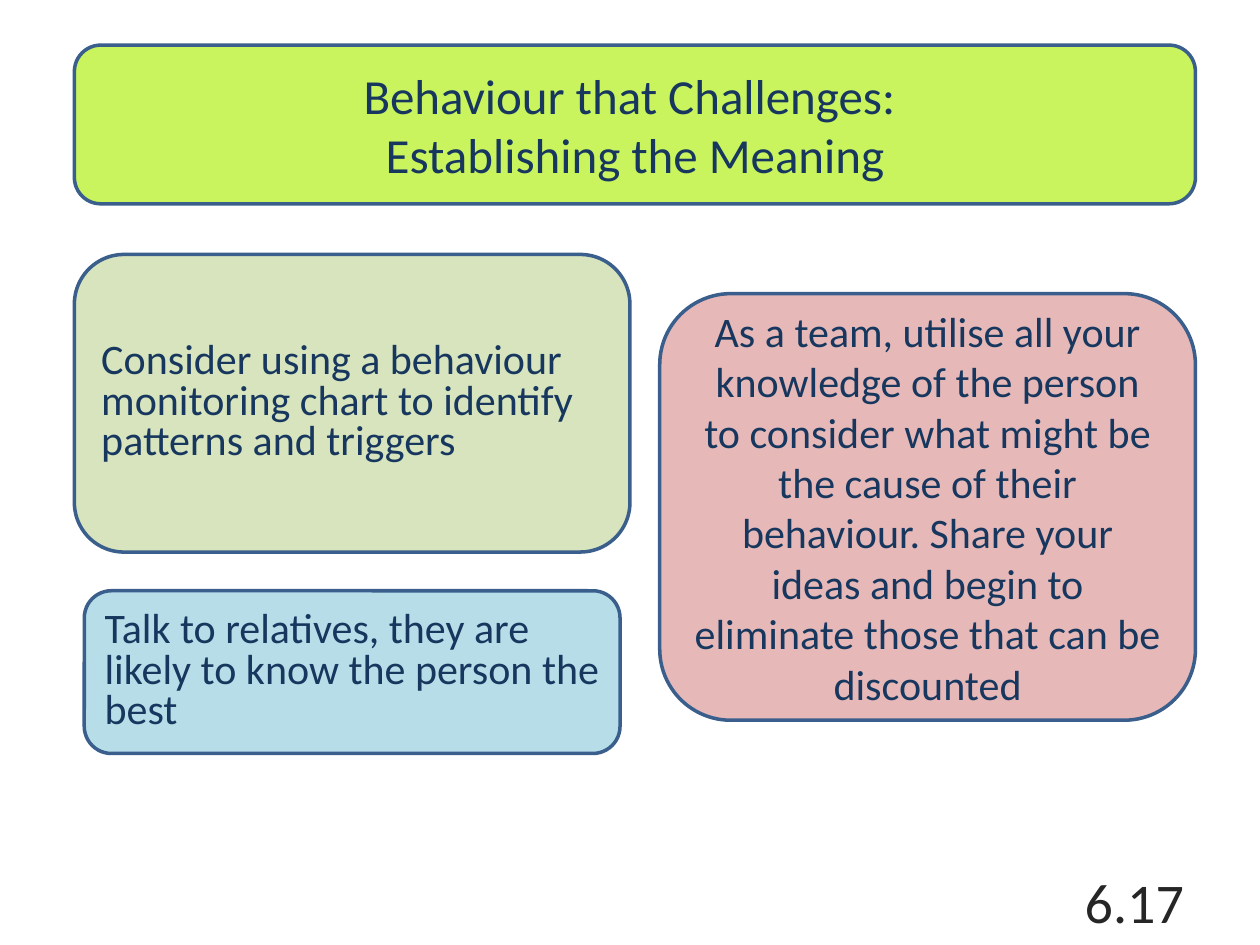
from pptx import Presentation
from pptx.dml.color import RGBColor
from pptx.enum.shapes import MSO_SHAPE as Shape
from pptx.enum.text import MSO_ANCHOR as Anchor, PP_ALIGN as Align
from pptx.util import Cm, Pt

NAVY = "17375E"
OUTLINE = "3A5F8C"


def color(value):
    return RGBColor.from_string(value)


def write_text(shape, lines, size, font_color, alignment, spacing=None):
    """Fill the shape with one paragraph per line, centred vertically."""
    text_frame = shape.text_frame
    text_frame.word_wrap = True
    text_frame.vertical_anchor = Anchor.MIDDLE
    text_frame.text = "\n".join(lines)
    for paragraph in text_frame.paragraphs:
        paragraph.alignment = alignment
        paragraph.line_spacing = spacing
        for run in paragraph.runs:
            run.font.name = "Calibri"
            run.font.size = Pt(size)
            run.font.color.rgb = color(font_color)


presentation = Presentation()
presentation.slide_width = Cm(25.4)
presentation.slide_height = Cm(19.05)
slide = presentation.slides.add_slide(presentation.slide_layouts[6])

# left, top, width, height in cm, fill, lines, size, alignment, line spacing
panels = [
    (1.5, 0.91, 22.6, 3.2, "C9F45E",
     ["Behaviour that Challenges: ", "Establishing the Meaning"],
     28, Align.CENTER, None),
    (1.5, 5.13, 11.2, 6, "D7E4BD",
     ["Consider using a behaviour monitoring chart to identify "
      "patterns and triggers"],
     24, Align.LEFT, 0.8),
    (1.7, 11.91, 10.8, 3.28, "B7DEE8",
     ["Talk to relatives, they are likely to know the person the best"],
     24, Align.LEFT, 0.8),
    (13.3, 5.92, 10.8, 8.6, "E6B9B8",
     ["As a team, utilise all your knowledge of the person to consider what "
      "might be the cause of their behaviour. Share your ideas and begin to "
      "eliminate those that can be discounted"],
     24, Align.CENTER, None),
]
for left, top, width, height, fill, lines, size, alignment, spacing in panels:
    panel = slide.shapes.add_shape(
        Shape.ROUNDED_RECTANGLE, Cm(left), Cm(top), Cm(width), Cm(height))
    panel.shadow.inherit = False
    panel.fill.solid()
    panel.fill.fore_color.rgb = color(fill)
    panel.line.color.rgb = color(OUTLINE)
    panel.line.width = Pt(2)
    write_text(panel, lines, size, NAVY, alignment, spacing)

page_number = slide.shapes.add_textbox(Cm(18.2), Cm(17.65), Cm(5.92), Cm(1.02))
write_text(page_number, ["6.17"], 32, "262626", Align.RIGHT)

presentation.save("out.pptx")
